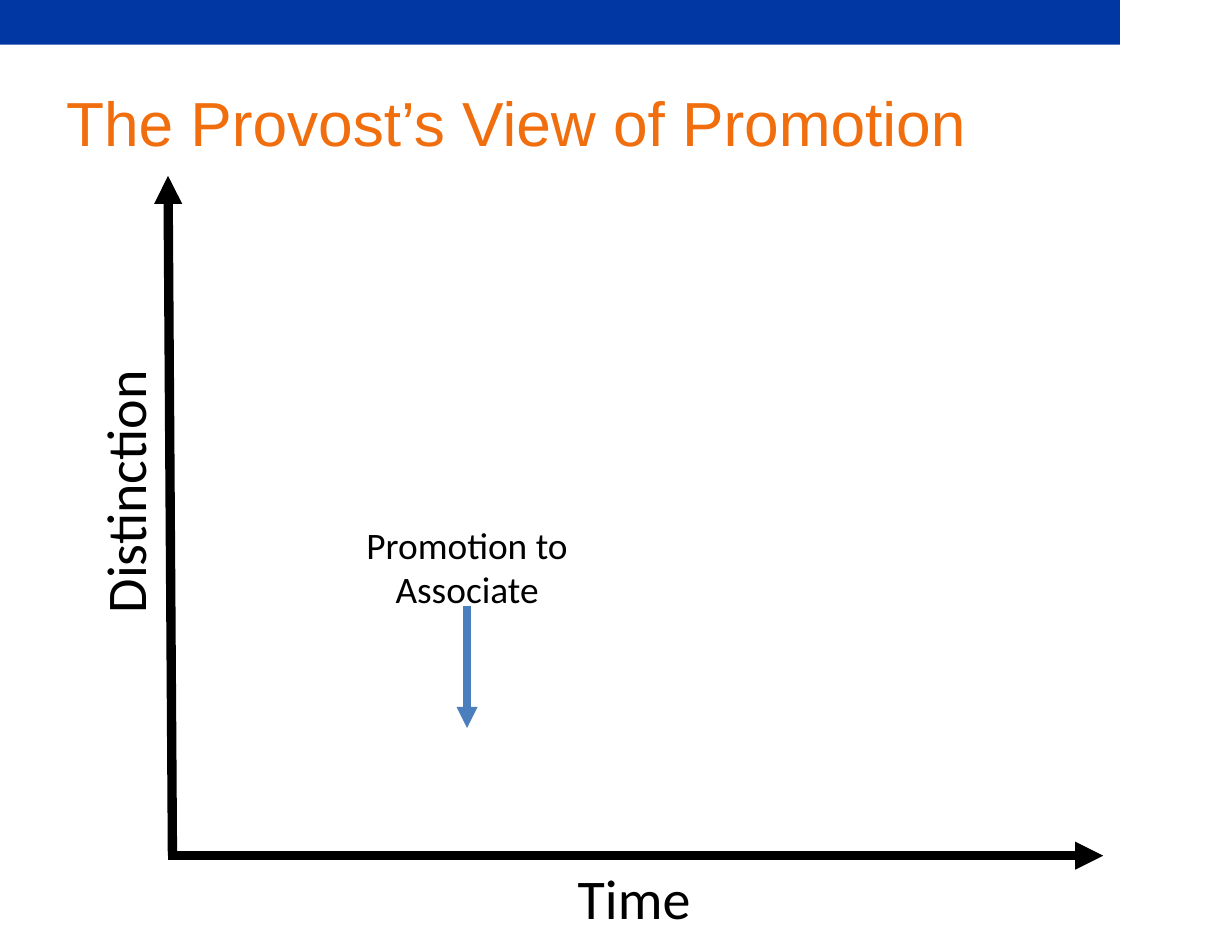
"""Build a slide charting distinction over time, with the promotion to associate marked."""
from dataclasses import dataclass

from lxml import etree
from pptx import Presentation
from pptx.dml.color import RGBColor
from pptx.enum.shapes import MSO_CONNECTOR as Connector, MSO_SHAPE as Shape
from pptx.enum.text import MSO_AUTO_SIZE as AutoSize, PP_ALIGN as Align
from pptx.oxml.ns import qn
from pptx.util import Inches, Pt


@dataclass(frozen=True)
class Theme:
    banner: RGBColor = RGBColor.from_string("0037A2")
    title: RGBColor = RGBColor.from_string("F06E0D")
    ink: RGBColor = RGBColor.from_string("000000")
    marker: RGBColor = RGBColor.from_string("4B7EBC")
    title_size: Pt = Pt(40)
    axis_size: Pt = Pt(36)
    label_size: Pt = Pt(24)
    axis_width: Pt = Pt(6)
    marker_width: Pt = Pt(4.5)
    title_font: str = "Arial"
    body_font: str = "Calibri"


theme = Theme()
presentation = Presentation()
presentation.slide_width = Inches(11)
presentation.slide_height = Inches(8.5)
slide = presentation.slides.add_slide(presentation.slide_layouts[6])


def add_label(text, box, font_name, size, color, **frame_format):
    shape = slide.shapes.add_textbox(*map(Inches, box))
    frame = shape.text_frame
    frame.auto_size = AutoSize.SHAPE_TO_FIT_TEXT
    for name, value in frame_format.items():
        setattr(frame, name, value)
    paragraph = frame.paragraphs[0]
    run = paragraph.add_run()
    run.text = text
    for name, value in {"name": font_name, "size": size}.items():
        setattr(run.font, name, value)
    run.font.color.rgb = color
    return shape


def add_arrow(start, end, color, width):
    arrow = slide.shapes.add_connector(Connector.STRAIGHT, *map(Inches, start + end))
    arrow.line.color.rgb = color
    arrow.line.width = width
    properties = arrow.element.spPr
    etree.SubElement(properties.find(qn("a:ln")), qn("a:tailEnd"), type="triangle")
    etree.SubElement(properties, qn("a:effectLst"))


banner = slide.shapes.add_shape(Shape.RECTANGLE, 0, 0, Inches(10), Inches(0.4))
banner.shadow.inherit = False
banner.fill.solid()
banner.fill.fore_color.rgb = theme.banner
banner.line.fill.background()

no_margins = {f"margin_{side}": 0 for side in ("left", "top", "right", "bottom")}
add_label("The Provost’s View of Promotion", (0.59, 0.75, 8.63, 0.67),
          theme.title_font, theme.title_size, theme.title, word_wrap=True, **no_margins)

for text, box, rotation in (
    ("Distinction", (-0.09, 4.02, 2.4, 0.71), 270),
    ("Time", (5.06, 7.66, 1.22, 0.71), 0),
):
    axis_label = add_label(text, box, theme.body_font, theme.axis_size, theme.ink, word_wrap=False)
    axis_label.rotation = rotation

for start, end in (((1.54, 7.64), (1.5, 1.57)), ((1.5, 7.64), (9.85, 7.64))):
    add_arrow(start, end, theme.ink, theme.axis_width)

promotion = add_label("Promotion to Associate", (2.98, 4.61, 2.38, 0.91),
                      theme.body_font, theme.label_size, theme.ink, word_wrap=True)
promotion.text_frame.paragraphs[0].alignment = Align.CENTER
add_arrow((4.17, 5.41), (4.17, 6.5), theme.marker, theme.marker_width)

presentation.save("out.pptx")
